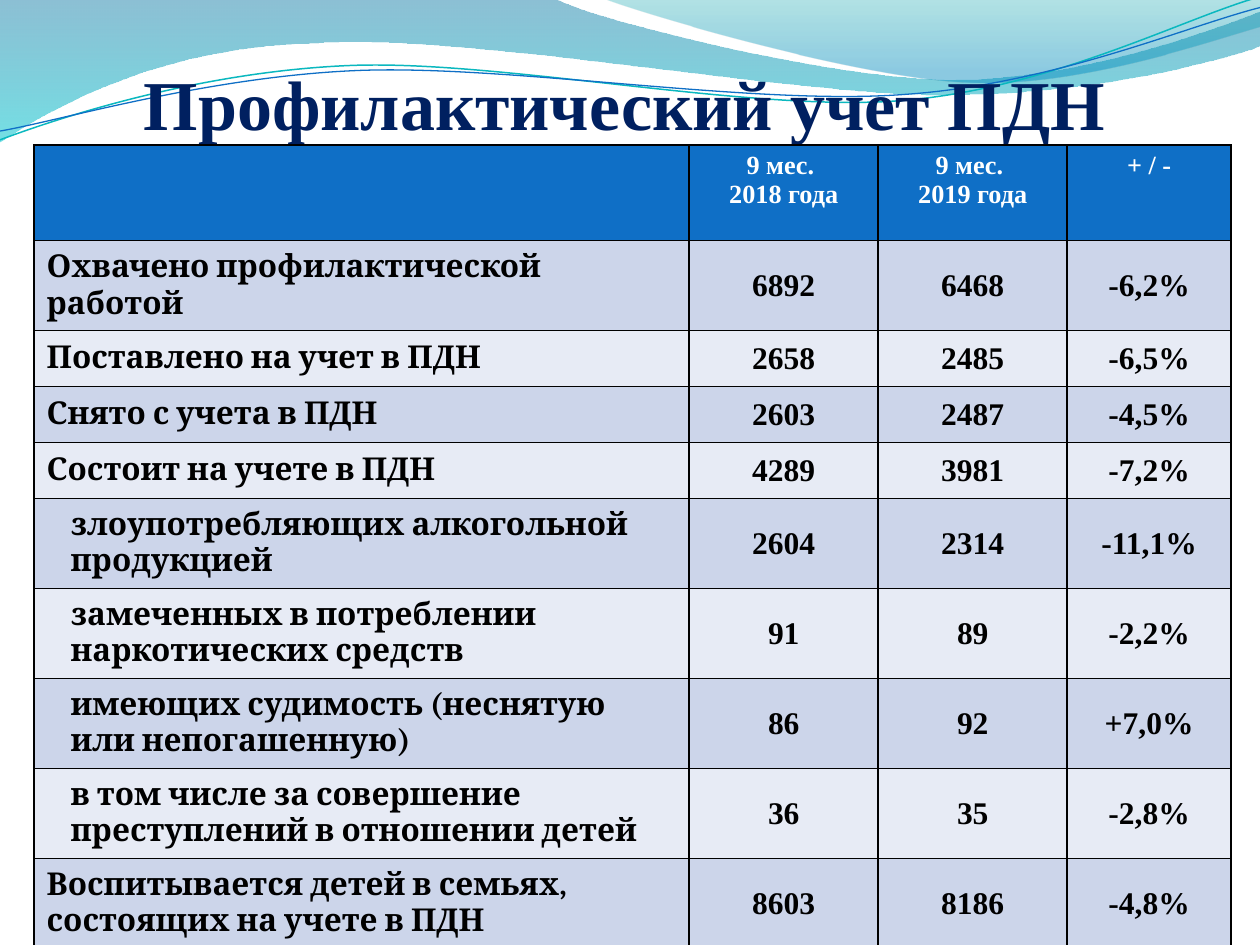
from dataclasses import dataclass
from math import cos, radians, sin

from lxml.etree import SubElement
from pptx import Presentation
from pptx.dml.color import RGBColor
from pptx.enum.text import MSO_ANCHOR as Anchor, PP_ALIGN as Align
from pptx.oxml.ns import qn
from pptx.util import Inches, Pt


@dataclass(frozen=True)
class Theme:
    serif: str = "Times New Roman"
    label_font: str = "Cambria"
    title_color: str = "002060"
    header_fill: str = "0F6FC6"
    bands: tuple = ("CCD5EA", "E7EBF5")
    black: str = "000000"
    white: str = "FFFFFF"
    teal_line: str = "0AB8BF"
    blue_line: str = "0F6FC6"
    left_wave: tuple = ((0, "0074A1", 45), (1, "00C6CF", 55))
    right_wave: tuple = ((0, "00A1A9", 30), (0.8, "008BBF", 45))
    title_size: int = 40
    header_size: int = 15
    body_size: int = 18


THEME = Theme()
CURVE_TILT = 2.7

# Wave outlines: two numbers are a straight line's end, six numbers a Bezier curve
LEFT_WAVE = [(0, 0), (4.4, -0.01), (4.76, 0.17, 6.64, 0.63, 7.58, 0.63),
             (8.53, 0.63, 9.58, 0.26, 10, 0.09), (10.01, 0.36),
             (9.83, 0.44, 8.7, 0.76, 7.46, 0.75),
             (6.22, 0.75, 3.82, 0.28, 2.57, 0.34),
             (1.29, 0.36, 0.46, 0.83, -0.01, 1.13), (0, 0)]
RIGHT_WAVE = [(4.79, -0.01), (5.09, 0.11, 6.82, 0.62, 7.69, 0.65),
              (8.56, 0.69, 9.61, 0.32, 10, 0.21), (10, 0), (4.79, -0.01)]
TEAL_CURVE = [(0, 1.11), (0.48, 0.93, 1.58, 0.57, 2.77, 0.52),
              (3.95, 0.47, 5.93, 0.89, 7.13, 0.8),
              (8.33, 0.71, 9.38, 0.15, 9.98, -0.02)]
BLUE_CURVE = [(0, 1.04), (0.47, 0.96, 1.64, 0.61, 2.83, 0.56),
              (4.03, 0.51, 5.97, 0.84, 7.17, 0.75),
              (8.36, 0.67, 9.41, 0.21, 10, 0.06)]

# Table content
COLUMN_WIDTHS = (5.2, 1.5, 1.5, 1.3)
HEADER_HEIGHT, ONE_LINE, TWO_LINES = 0.61, 4 / 9, 5 / 7
HEADERS = [(), ("9 мес. ", "2018 года"), ("9 мес. ", "2019 года"), ("+ / -",)]
# label, values, row height, left indent
ROWS = [
    ("Охвачено профилактической работой", ("6892", "6468", "-6,2%"), TWO_LINES, 0),
    ("Поставлено на учет в ПДН", ("2658", "2485", "-6,5%"), ONE_LINE, 0),
    ("Снято с учета в ПДН", ("2603", "2487", "-4,5%"), ONE_LINE, 0),
    ("Состоит на учете в ПДН", ("4289", "3981", "-7,2%"), ONE_LINE, 0),
    ("злоупотребляющих алкогольной продукцией", ("2604", "2314", "-11,1%"), TWO_LINES, 0.19),
    ("замеченных в потреблении наркотических средств", ("91", "89", "-2,2%"), TWO_LINES, 0.19),
    ("имеющих судимость (неснятую или непогашенную)", ("86", "92", "+7,0%"), TWO_LINES, 0.19),
    ("в том числе за совершение преступлений в отношении детей", ("36", "35", "-2,8%"),
     TWO_LINES, 0.19),
    ("Воспитывается детей в семьях, состоящих на учете в ПДН", ("8603", "8186", "-4,8%"),
     TWO_LINES, 0),
]


def rgb(color):
    return RGBColor.from_string(color)


def turn(x, y, degrees):
    """Turn a point about the middle of the curves."""
    dx, dy, angle = x - 4.99, y - 0.58, radians(degrees)
    return (4.99 + dx * cos(angle) - dy * sin(angle),
            0.58 + dx * sin(angle) + dy * cos(angle))


def add_outline(shapes, segments, close, tilt=0):
    points = [turn(*segment[i:i + 2], tilt)
              for segment in segments for i in range(0, len(segment), 2)]
    points = [(Inches(x), Inches(y)) for x, y in points]
    builder = shapes.build_freeform(*points[0])
    builder.add_line_segments(points[1:], close=close)
    shape = builder.convert_to_shape()
    shape.shadow.inherit = False
    shape.rotation = -tilt

    # Join each run of three line ends into one Bezier curve
    lines = iter(list(shape._element.iter(qn("a:lnTo"))))
    for segment in segments[1:]:
        line = next(lines)
        if len(segment) == 6:
            line.addprevious(curve := line.makeelement(qn("a:cubicBezTo")))
            for part in (line, next(lines), next(lines)):
                curve.append(part[0])
                part.getparent().remove(part)
    return shape


def add_wave(slide, segments, stops):
    """Add a filled wave; each stop is position, colour and opacity percent."""
    shape = add_outline(slide.shapes, segments, close=True)
    shape.line.fill.background()
    shape.fill.gradient()
    shape.fill.gradient_angle = 270
    for stop, (position, color, _) in zip(shape.fill.gradient_stops, stops):
        stop.position = position
        stop.color.rgb = rgb(color)
    colors = shape._element.spPr.iter(qn("a:srgbClr"))
    for element, (_, _, opacity) in zip(colors, stops):
        SubElement(element, qn("a:alpha"), val=str(opacity * 1000))


def add_curve(group, segments, color, width):
    shape = add_outline(group.shapes, segments, close=False, tilt=CURVE_TILT)
    shape.fill.background()
    shape.line.color.rgb = rgb(color)
    shape.line.width = Pt(width)


def write(paragraph, text, font_name, size, color, align=Align.CENTER):
    paragraph.alignment = align
    run = paragraph.add_run()
    run.text = text
    font = run.font
    font.name, font.size = font_name, Pt(size)
    font.bold, font.italic = True, False
    font.color.rgb = rgb(color)


def add_title(slide, text):
    shape = slide.shapes.add_textbox(Inches(0.22), Inches(0.52), Inches(9.61), Inches(0.63))
    frame = shape.text_frame
    frame.word_wrap = True
    frame.vertical_anchor = Anchor.BOTTOM
    frame.margin_left = frame.margin_right = frame.margin_bottom = 0
    frame.margin_top = Inches(0.05)
    write(frame.paragraphs[0], text, THEME.serif, THEME.title_size, THEME.title_color)


def style_cell(cell, fill, anchor):
    cell.vertical_anchor = anchor
    # Borders come before the fill in the cell properties
    properties = cell._tc.get_or_add_tcPr()
    for side in ("lnL", "lnR", "lnT", "lnB"):
        border = SubElement(properties, qn(f"a:{side}"), w=str(Pt(1)))
        solid = SubElement(border, qn("a:solidFill"))
        SubElement(solid, qn("a:srgbClr"), val=THEME.black)
    cell.fill.solid()
    cell.fill.fore_color.rgb = rgb(fill)


def fill_header(cells):
    for cell, lines in zip(cells, HEADERS):
        style_cell(cell, THEME.header_fill, Anchor.TOP)
        cell.margin_bottom = Inches(0.21)
        frame = cell.text_frame
        for index, line in enumerate(lines):
            paragraph = frame.add_paragraph() if index else frame.paragraphs[0]
            write(paragraph, line, THEME.serif, THEME.header_size, THEME.white)


def fill_row(cells, label, values, indent, fill):
    for index, (cell, text) in enumerate(zip(cells, (label, *values))):
        style_cell(cell, fill, Anchor.MIDDLE)
        paragraph = cell.text_frame.paragraphs[0]
        if index:
            write(paragraph, text, THEME.serif, THEME.body_size, THEME.black)
            continue
        write(paragraph, text, THEME.label_font, THEME.body_size, THEME.black, Align.LEFT)
        if indent:
            properties = paragraph._p.get_or_add_pPr()
            properties.set("marL", str(Inches(indent)))
            properties.set("indent", "0")


def add_register_table(slide):
    heights = [HEADER_HEIGHT] + [height for _, _, height, _ in ROWS]
    table = slide.shapes.add_table(
        len(heights), len(COLUMN_WIDTHS), Inches(0.27), Inches(1.15),
        Inches(sum(COLUMN_WIDTHS)), Inches(sum(heights))).table
    table.first_row = table.horz_banding = False
    for column, width in zip(table.columns, COLUMN_WIDTHS):
        column.width = Inches(width)
    for row, height in zip(table.rows, heights):
        row.height = Inches(height)
    fill_header(table.rows[0].cells)
    for index, (label, values, _, indent) in enumerate(ROWS):
        fill_row(table.rows[index + 1].cells, label, values, indent, THEME.bands[index % 2])


def main():
    presentation = Presentation()
    presentation.slide_width, presentation.slide_height = Inches(10), Inches(7.5)
    slide = presentation.slides.add_slide(presentation.slide_layouts[6])

    # Wave decoration along the top
    add_wave(slide, LEFT_WAVE, THEME.left_wave)
    add_wave(slide, RIGHT_WAVE, THEME.right_wave)
    group = slide.shapes.add_group_shape()
    add_curve(group, TEAL_CURVE, THEME.teal_line, 0.85)
    add_curve(group, BLUE_CURVE, THEME.blue_line, 0.75)

    # Title and table
    add_title(slide, "Профилактический учет ПДН ")
    add_register_table(slide)
    presentation.save("out.pptx")


if __name__ == "__main__":
    main()
